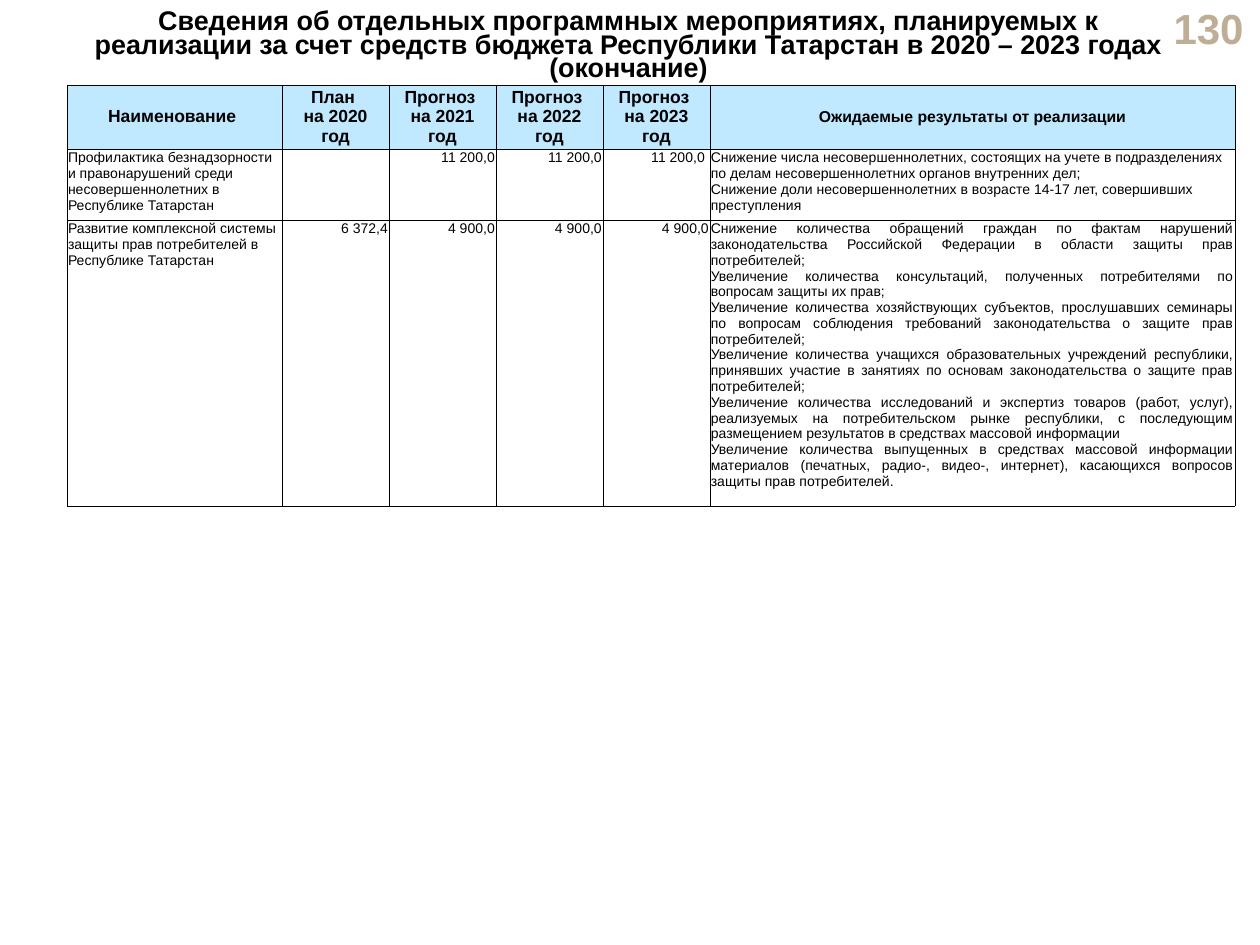
from dataclasses import dataclass

from lxml import etree
from pptx import Presentation
from pptx.dml.color import RGBColor
from pptx.enum.text import MSO_ANCHOR, MSO_AUTO_SIZE, PP_ALIGN
from pptx.oxml.ns import qn
from pptx.slide import Slide
from pptx.table import Table, _Cell
from pptx.text.text import TextFrame
from pptx.util import Emu, Pt

LEFT, CENTER, RIGHT, JUSTIFY = PP_ALIGN.LEFT, PP_ALIGN.CENTER, PP_ALIGN.RIGHT, PP_ALIGN.JUSTIFY
TOP, MIDDLE = MSO_ANCHOR.TOP, MSO_ANCHOR.MIDDLE
NO_AUTOFIT = MSO_AUTO_SIZE.NONE
EMU_PER_PX = 914400 / 126
TITLE_ONLY_LAYOUT = 5


@dataclass(frozen=True)
class Theme:
    font: str = "Arial"
    ink: str = "000000"
    page_number: str = "BFAE96"
    header_fill: str = "C0E9FF"
    title_size: float = 15.4
    page_number_size: float = 24
    header_size: float = 10
    result_header_size: float = 9
    body_size: float = 8
    border_width: float = 0.25
    title_spacing: float = 0.72


@dataclass(frozen=True)
class Box:
    left: int
    top: int
    width: int
    height: int


@dataclass(frozen=True)
class TextStyle:
    size: float
    color: str
    bold: bool
    align: PP_ALIGN


@dataclass(frozen=True)
class Programme:
    name: str
    amounts: tuple[str, ...]
    results: tuple[str, ...]
    results_align: PP_ALIGN


THEME = Theme()
TITLE_BOX = Box(71, 6, 1115, 79)
PAGE_NUMBER_BOX = Box(1148, 6, 108, 43)
TABLE_BOX = Box(67, 85, 1168, 404)
COLUMN_WIDTHS = (215, *[107] * 4, 525)
ROW_HEIGHTS = (64, 71, 269)
TITLE = (
    "Сведения об отдельных программных мероприятиях, планируемых к реализации "
    "за счет средств бюджета Республики Татарстан в 2020 – 2023 годах (окончание)"
)
HEADERS = (
    "Наименование ",
    "План \vна 2020 год",
    *[f"Прогноз \vна {year} год" for year in (2021, 2022, 2023)],
    "Ожидаемые результаты от реализации",
)
PROGRAMMES = (
    Programme(
        "Профилактика безнадзорности и правонарушений среди несовершеннолетних в Республике Татарстан",
        ("", "11 200,0", "11 200,0", "11 200,0 "),
        (
            "Снижение числа несовершеннолетних, состоящих на учете в подразделениях "
            "по делам несовершеннолетних органов внутренних дел;",
            "Снижение доли несовершеннолетних в возрасте 14-17 лет, совершивших преступления",
        ),
        LEFT,
    ),
    Programme(
        "Развитие комплексной системы защиты прав потребителей в Республике Татарстан",
        ("6 372,4", "4 900,0", "4 900,0", "4 900,0"),
        (
            "Снижение количества обращений граждан по фактам нарушений законодательства "
            "Российской Федерации в области защиты прав потребителей;",
            "Увеличение количества консультаций, полученных потребителями по вопросам защиты их прав;",
            "Увеличение количества хозяйствующих субъектов, прослушавших семинары по вопросам "
            "соблюдения требований законодательства о защите прав потребителей;",
            "Увеличение количества учащихся образовательных учреждений республики, принявших участие "
            "в занятиях по основам законодательства о защите прав потребителей;",
            "Увеличение количества исследований и экспертиз товаров (работ, услуг), реализуемых на "
            "потребительском рынке республики, с последующим размещением результатов в средствах "
            "массовой информации",
            "Увеличение количества выпущенных в средствах массовой информации материалов (печатных, "
            "радио-, видео-, интернет), касающихся вопросов защиты прав потребителей.",
        ),
        JUSTIFY,
    ),
)


def px(length: int) -> Emu:
    return Emu(round(length * EMU_PER_PX))


def frame(box: Box) -> tuple[Emu, ...]:
    return px(box.left), px(box.top), px(box.width), px(box.height)


def write_text(text_frame: TextFrame, text: str, style: TextStyle) -> None:
    text_frame.text = text
    for paragraph in text_frame.paragraphs:
        paragraph.alignment = style.align
        for run in paragraph.runs:
            run.font.name = THEME.font
            run.font.size = Pt(style.size)
            run.font.bold = style.bold
            run.font.color.rgb = RGBColor.from_string(style.color)


def add_title(slide: Slide) -> None:
    title = slide.shapes.title
    title.left, title.top, title.width, title.height = frame(TITLE_BOX)
    text_frame = title.text_frame
    text_frame.auto_size = NO_AUTOFIT
    text_frame.word_wrap = True
    text_frame.vertical_anchor = TOP
    write_text(text_frame, TITLE, TextStyle(THEME.title_size, THEME.ink, True, CENTER))
    text_frame.paragraphs[0].line_spacing = THEME.title_spacing
    text_frame.paragraphs[0].space_before = Pt(0)


def add_page_number(slide: Slide) -> None:
    text_frame = slide.shapes.add_textbox(*frame(PAGE_NUMBER_BOX)).text_frame
    text_frame.word_wrap = True
    text_frame.vertical_anchor = MIDDLE
    style = TextStyle(THEME.page_number_size, THEME.page_number, True, RIGHT)
    write_text(text_frame, "130", style)


def add_borders(cell: _Cell) -> None:
    properties = cell._tc.get_or_add_tcPr()
    for side in ("a:lnL", "a:lnR", "a:lnT", "a:lnB"):
        line = etree.SubElement(properties, qn(side), w=str(Pt(THEME.border_width)))
        fill = etree.SubElement(line, qn("a:solidFill"))
        etree.SubElement(fill, qn("a:srgbClr"), val=THEME.ink)


def fill_header_cell(cell: _Cell, text: str, size: float) -> None:
    add_borders(cell)
    cell.fill.solid()
    cell.fill.fore_color.rgb = RGBColor.from_string(THEME.header_fill)
    cell.vertical_anchor = MIDDLE
    cell.margin_left = cell.margin_right = px(5)
    cell.margin_top = cell.margin_bottom = 0
    write_text(cell.text_frame, text, TextStyle(size, THEME.ink, True, CENTER))


def fill_body_cell(cell: _Cell, text: str, align: PP_ALIGN) -> None:
    add_borders(cell)
    cell.fill.background()
    cell.vertical_anchor = TOP
    cell.margin_left = cell.margin_right = cell.margin_top = px(1)
    cell.margin_bottom = 0
    write_text(cell.text_frame, text, TextStyle(THEME.body_size, THEME.ink, False, align))


def fill_programme_row(table: Table, row: int, programme: Programme) -> None:
    fill_body_cell(table.cell(row, 0), programme.name, LEFT)
    for column, amount in enumerate(programme.amounts, start=1):
        fill_body_cell(table.cell(row, column), amount, RIGHT)
    results_cell = table.cell(row, len(HEADERS) - 1)
    fill_body_cell(results_cell, "\n".join(programme.results), programme.results_align)


def add_programme_table(slide: Slide) -> None:
    table = slide.shapes.add_table(len(ROW_HEIGHTS), len(COLUMN_WIDTHS), *frame(TABLE_BOX)).table
    table.first_row = table.horz_banding = False
    for column, width in zip(table.columns, COLUMN_WIDTHS):
        column.width = px(width)
    for row, height in zip(table.rows, ROW_HEIGHTS):
        row.height = px(height)
    for column, header in enumerate(HEADERS):
        is_results = column == len(HEADERS) - 1
        size = THEME.result_header_size if is_results else THEME.header_size
        fill_header_cell(table.cell(0, column), header, size)
    for row, programme in enumerate(PROGRAMMES, start=1):
        fill_programme_row(table, row, programme)


def main() -> None:
    presentation = Presentation()
    presentation.slide_width, presentation.slide_height = px(1260), px(945)
    slide = presentation.slides.add_slide(presentation.slide_layouts[TITLE_ONLY_LAYOUT])
    add_page_number(slide)
    add_title(slide)
    add_programme_table(slide)
    presentation.save("out.pptx")


if __name__ == "__main__":
    main()
